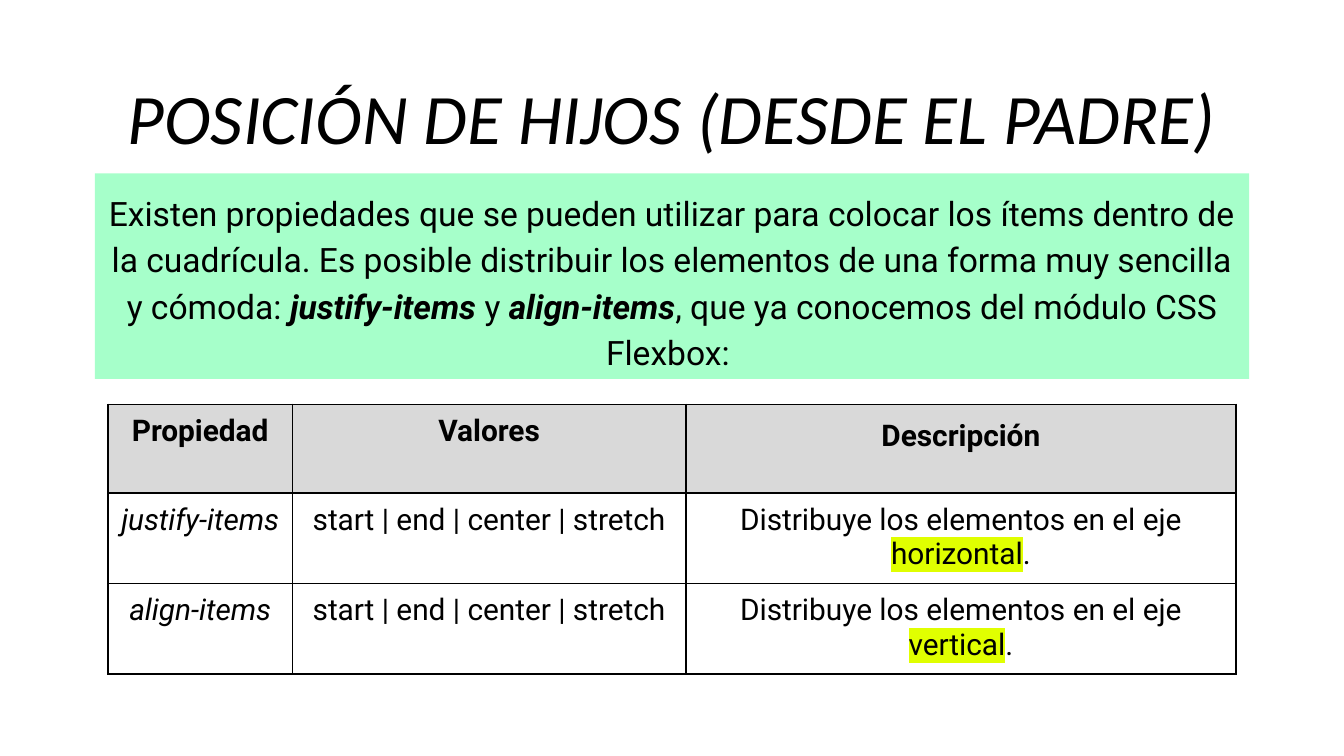
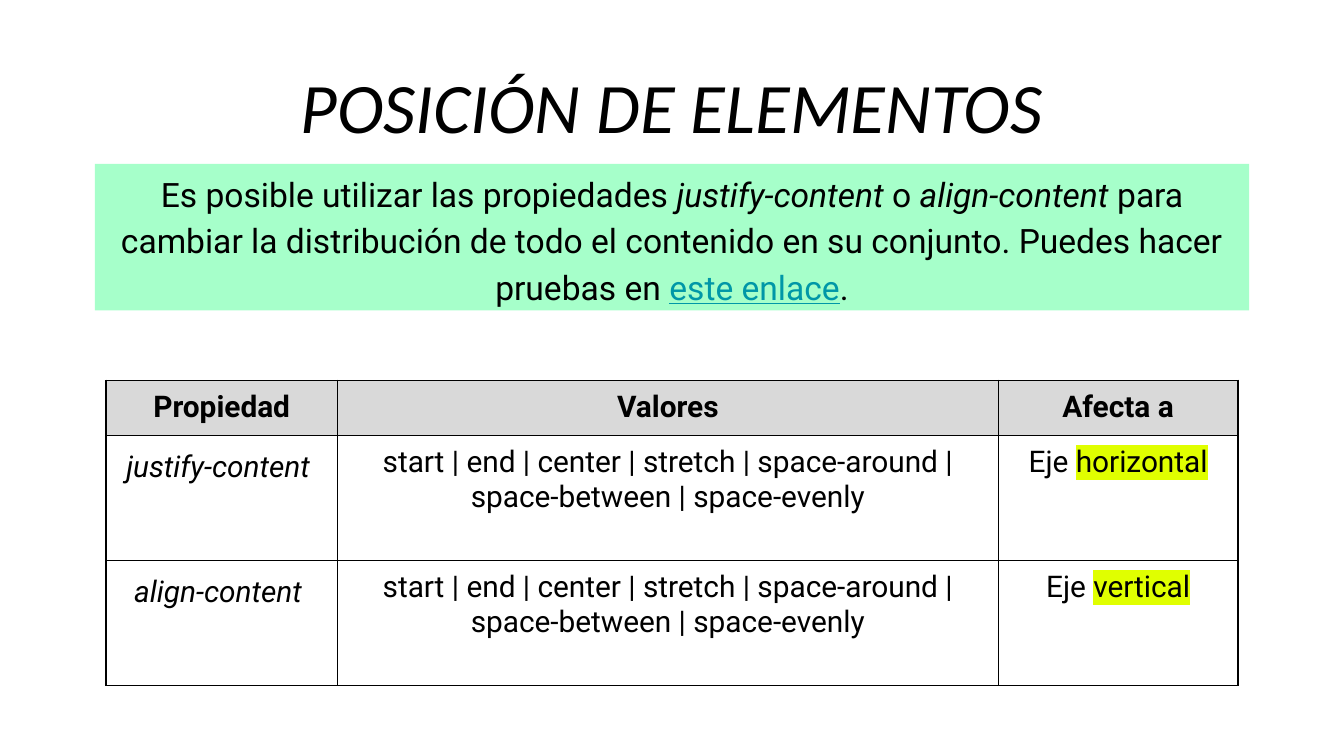
import dataclasses
import typing

import lxml.etree
import pptx
import pptx.dml.color
import pptx.enum.shapes
import pptx.enum.text
import pptx.oxml.ns
import pptx.util

Inches = pptx.util.Inches

BLACK = "000000"
MINT = "A6FFCA"
HEADER_GREY = "D9D9D9"
HIGHLIGHT = "E0FF00"
LINK = "0097A7"
TITLE_FONT = "Calibri"
BODY_FONT = "Roboto"
SLIDE_WIDTH = 10
SLIDE_HEIGHT = SLIDE_WIDTH * 9 / 16
WIDTH = 8.59
TITLE_HEIGHT = 1.17
LOOSE = 1.15


@dataclasses.dataclass(frozen=True)
class Run:
    text: str
    bold: bool = False
    italic: bool = False
    underline: bool = False
    color: str = BLACK
    highlight: str | None = None


@dataclasses.dataclass(frozen=True)
class Cell:
    runs: tuple[Run, ...]
    line_spacing: float | None = None
    fill: str | None = None


@dataclasses.dataclass(frozen=True)
class Band:
    top: float
    height: float
    runs: tuple[Run, ...]
    anchor: pptx.enum.text.MSO_ANCHOR = pptx.enum.text.MSO_ANCHOR.TOP


@dataclasses.dataclass(frozen=True)
class Table:
    top: float
    columns: tuple[float, ...]
    row_heights: tuple[float, ...]
    rows: tuple[tuple[Cell, ...], ...]


@dataclasses.dataclass(frozen=True)
class Page:
    title: str
    title_top: float
    band: Band
    table: Table


def rgb(color: str) -> pptx.dml.color.RGBColor:
    return pptx.dml.color.RGBColor.from_string(color)


def centred_frame(top: float, width: float, height: float) -> tuple[int, ...]:
    """Return left, top, width and height, centred across the slide."""
    left = (SLIDE_WIDTH - width) / 2
    return tuple(Inches(length) for length in (left, top, width, height))


def write_text(text_frame, runs: typing.Iterable[Run], *, size: float,
               font: str = BODY_FONT, line_spacing: float | None = None,
               space_before: float | None = None) -> None:
    text_frame.word_wrap = True
    paragraph = text_frame.paragraphs[0]
    paragraph.alignment = pptx.enum.text.PP_ALIGN.CENTER
    if line_spacing is not None:
        paragraph.line_spacing = line_spacing
    if space_before is not None:
        paragraph.space_before = pptx.util.Pt(space_before)
    for part in runs:
        run = paragraph.add_run()
        run.text = part.text
        run.font.size = pptx.util.Pt(size)
        run.font.name = font
        run.font.bold = part.bold
        run.font.italic = part.italic
        run.font.underline = part.underline
        run.font.color.rgb = rgb(part.color)
        if part.highlight:
            add_highlight(run, part.highlight)


def add_highlight(run, color: str) -> None:
    """Mark the run; the schema wants the highlight right after the fill."""
    name = pptx.oxml.ns.qn
    highlight = lxml.etree.Element(name("a:highlight"))
    lxml.etree.SubElement(highlight, name("a:srgbClr"), val=color)
    run.font._element.find(name("a:solidFill")).addnext(highlight)


def set_margins(target, margin: float) -> None:
    for side in ("left", "top", "right", "bottom"):
        setattr(target, f"margin_{side}", Inches(margin))


def add_borders(cell) -> None:
    """Draw 1 pt lines on all sides; they must precede the cell's fill."""
    name = pptx.oxml.ns.qn
    properties = cell._tc.get_or_add_tcPr()
    for index, side in enumerate(("lnL", "lnR", "lnT", "lnB")):
        line = lxml.etree.Element(name(f"a:{side}"), w=str(pptx.util.Pt(1)))
        fill = lxml.etree.SubElement(line, name("a:solidFill"))
        lxml.etree.SubElement(fill, name("a:srgbClr"), val=BLACK)
        properties.insert(index, line)


def add_title(slide, title: str, top: float) -> None:
    box = slide.shapes.add_textbox(*centred_frame(top, WIDTH, TITLE_HEIGHT))
    set_margins(box.text_frame, 0.1)
    write_text(box.text_frame, [Run(title, italic=True)], size=38,
               font=TITLE_FONT, line_spacing=LOOSE, space_before=20)


def add_band(slide, band: Band) -> None:
    shape = slide.shapes.add_shape(
        pptx.enum.shapes.MSO_SHAPE.RECTANGLE,
        *centred_frame(band.top, WIDTH, band.height))
    shape.shadow.inherit = False
    shape.fill.solid()
    shape.fill.fore_color.rgb = rgb(MINT)
    shape.line.fill.background()
    set_margins(shape.text_frame, 0.1)
    shape.text_frame.vertical_anchor = band.anchor
    write_text(shape.text_frame, band.runs, size=18, line_spacing=LOOSE)


def add_table(slide, content: Table) -> None:
    table = slide.shapes.add_table(
        len(content.row_heights), len(content.columns),
        *centred_frame(content.top, sum(content.columns),
                       sum(content.row_heights))).table
    table.first_row = table.horz_banding = False
    for column, width in zip(table.columns, content.columns):
        column.width = Inches(width)
    for row, height, cells in zip(table.rows, content.row_heights, content.rows):
        row.height = Inches(height)
        for cell, entry in zip(row.cells, cells):
            set_margins(cell, 0.07)
            if entry.fill:
                cell.fill.solid()
                cell.fill.fore_color.rgb = rgb(entry.fill)
            else:
                cell.fill.background()
            add_borders(cell)
            write_text(cell.text_frame, entry.runs, size=16,
                       line_spacing=entry.line_spacing)


def header(text: str, line_spacing: float | None = None) -> Cell:
    return Cell((Run(text, bold=True),), line_spacing, HEADER_GREY)


def property_row(name: str, values: str, lead: str, axis: str, end: str = "",
                 name_spacing: float | None = None) -> tuple[Cell, ...]:
    effect = [Run(lead), Run(axis, highlight=HIGHLIGHT)]
    if end:
        effect.append(Run(end))
    return (Cell((Run(name, italic=True),), name_spacing),
            Cell((Run(values),)), Cell(tuple(effect)))


AXES = ("horizontal", "vertical")
ITEM_VALUES = "start | end | center | stretch"
CONTENT_VALUES = ITEM_VALUES + " | space-around | space-between | space-evenly"

PAGES = (
    Page(
        "POSICIÓN DE HIJOS (DESDE EL PADRE)", 0.35,
        Band(1.29, 1.53, (
            Run("Existen propiedades que se pueden utilizar para colocar los "
                "ítems dentro de la cuadrícula. Es posible distribuir los "
                "elementos de una forma muy sencilla y cómoda: "),
            Run("justify-items", bold=True, italic=True),
            Run(" y "),
            Run("align-items", bold=True, italic=True),
            Run(", que ya conocemos del módulo CSS Flexbox: "))),
        Table(3.01, (1.37, 2.93, 4.09), (0.66, 0.67, 0.67), (
            (header("Propiedad"), header("Valores"),
             header("Descripción", LOOSE)),
            *(property_row(name, ITEM_VALUES,
                           "Distribuye los elementos en el eje ", axis, ".")
              for name, axis in zip(("justify-items", "align-items"), AXES))))),
    Page(
        "POSICIÓN DE ELEMENTOS", 0.27,
        Band(1.22, 1.09, (
            Run("Es posible utilizar las propiedades "),
            Run("justify-content", italic=True),
            Run(" o "),
            Run("align-content", italic=True),
            Run(" para cambiar la distribución de todo el contenido en su "
                "conjunto. Puedes hacer pruebas en "),
            Run("este enlace", underline=True, color=LINK),
            Run(".")), pptx.enum.text.MSO_ANCHOR.MIDDLE),
        Table(2.83, (1.72, 4.92, 1.78), (0.41, 0.93, 0.93), (
            (header("Propiedad"), header("Valores"), header("Afecta a")),
            *(property_row(name, CONTENT_VALUES, "Eje ", axis,
                           name_spacing=LOOSE)
              for name, axis in zip(("justify-content ", "align-content "),
                                    AXES))))),
)


def main() -> None:
    presentation = pptx.Presentation()
    presentation.slide_width = Inches(SLIDE_WIDTH)
    presentation.slide_height = Inches(SLIDE_HEIGHT)
    blank = presentation.slide_layouts[6]
    for page in PAGES:
        slide = presentation.slides.add_slide(blank)
        add_title(slide, page.title, page.title_top)
        add_band(slide, page.band)
        add_table(slide, page.table)
    presentation.save("out.pptx")


if __name__ == "__main__":
    main()
